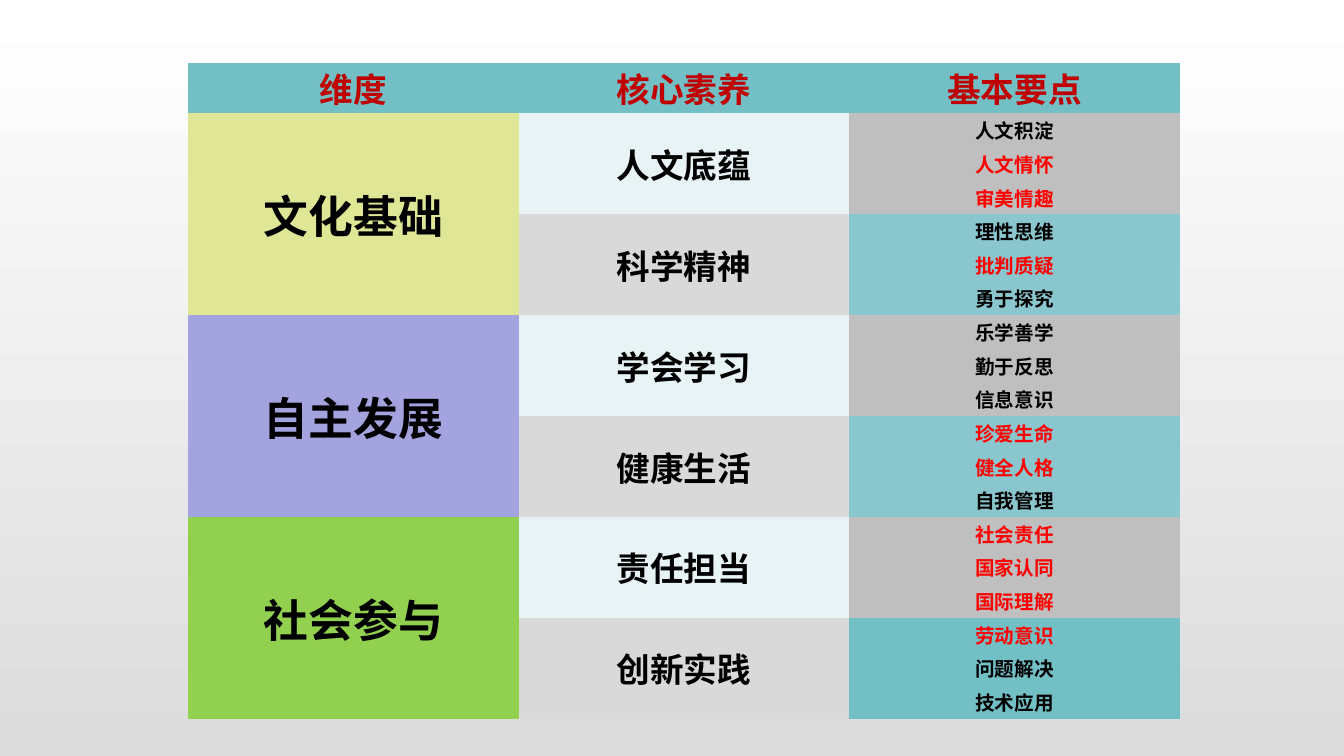
from lxml.etree import SubElement
from pptx import Presentation
from pptx.dml.color import RGBColor
from pptx.enum.text import MSO_ANCHOR, PP_ALIGN
from pptx.oxml.ns import qn
from pptx.util import Cm, Pt

COLORS = {
    "top": "FFFFFF", "bottom": "DCDCDC", "teal": "72BFC5", "aqua": "8AC6CD",
    "grey": "BFBFBF", "pale": "E7F3F4", "silver": "D9D9D9",
    "yellow": "DFE797", "violet": "A3A3E0", "green": "92D050",
    "header": "C00000", "black": "000000", "red": "FF0000",
}
HEADERS = ["维度", "核心素养", "基本要点"]
DIMENSIONS = [("文化基础", "yellow"), ("自主发展", "violet"), ("社会参与", "green")]
# Competency, fill of its points, points
COMPETENCIES = [
    ("人文底蕴", "grey", ["人文积淀", "人文情怀", "审美情趣"]),
    ("科学精神", "aqua", ["理性思维", "批判质疑", "勇于探究"]),
    ("学会学习", "grey", ["乐学善学", "勤于反思", "信息意识"]),
    ("健康生活", "aqua", ["珍爱生命", "健全人格", "自我管理"]),
    ("责任担当", "grey", ["社会责任", "国家认同", "国际理解"]),
    ("创新实践", "teal", ["劳动意识", "问题解决", "技术应用"]),
]
RED_POINTS = {"人文情怀", "审美情趣", "批判质疑", "珍爱生命", "健全人格",
              "社会责任", "国家认同", "国际理解", "劳动意识"}
POINTS_EACH = 3
DIMENSION_ROWS = 2 * POINTS_EACH
POINT_ROWS = POINTS_EACH * len(COMPETENCIES)


def rgb(name):
    return RGBColor.from_string(COLORS[name])


def set_background(s):
    fill = s.background.fill
    fill.gradient()
    fill.gradient_angle = 270
    for stop, name in zip(fill.gradient_stops, ("top", "bottom")):
        stop.color.rgb = rgb(name)


def hide_borders(cell):
    tc_pr = cell._tc.get_or_add_tcPr()
    for i, side in enumerate(("a:lnL", "a:lnR", "a:lnT", "a:lnB")):
        ln = SubElement(tc_pr, qn(side), w="0")
        SubElement(ln, qn("a:noFill"))
        tc_pr.insert(i, ln)


def fill_cell(cell, text, size, fill, color="black", anchor=MSO_ANCHOR.MIDDLE):
    cell.fill.solid()
    cell.fill.fore_color.rgb = rgb(fill)
    cell.margin_top = cell.margin_bottom = 0
    cell.vertical_anchor = anchor
    p = cell.text_frame.paragraphs[0]
    p.text = text
    p.alignment = PP_ALIGN.CENTER
    font = p.runs[0].font
    font.name, font.size, font.bold = "Arial", Pt(size), True
    font.color.rgb = rgb(color)


def merge_down(table, row, col, count):
    cell = table.cell(row, col)
    cell.merge(table.cell(row + count - 1, col))
    return cell


def add_competency_table(s):
    header_height, points_height = Cm(1.27), Cm(15.26)
    table = s.shapes.add_table(
        1 + POINT_ROWS, len(HEADERS), Cm(4.74), Cm(1.59),
        Cm(24.99), header_height + points_height).table
    for row in table.rows:
        row.height = points_height // POINT_ROWS
    table.rows[0].height = header_height
    for cell in table.iter_cells():
        hide_borders(cell)

    for col, text in enumerate(HEADERS):
        fill_cell(table.cell(0, col), text, 24, "teal", "header", MSO_ANCHOR.TOP)
    for i, (text, fill) in enumerate(DIMENSIONS):
        cell = merge_down(table, 1 + i * DIMENSION_ROWS, 0, DIMENSION_ROWS)
        fill_cell(cell, text, 32, fill)
    for i, (text, point_fill, points) in enumerate(COMPETENCIES):
        first = 1 + i * POINTS_EACH
        cell = merge_down(table, first, 1, POINTS_EACH)
        fill_cell(cell, text, 24, "silver" if i % 2 else "pale")
        for row, point in enumerate(points, first):
            color = "red" if point in RED_POINTS else "black"
            fill_cell(table.cell(row, 2), point, 14, point_fill, color)


def main():
    prs = Presentation()
    prs.slide_width, prs.slide_height = Cm(33.87), Cm(19.05)
    s = prs.slides.add_slide(prs.slide_layouts[6])
    set_background(s)
    add_competency_table(s)
    prs.save("out.pptx")


if __name__ == "__main__":
    main()
